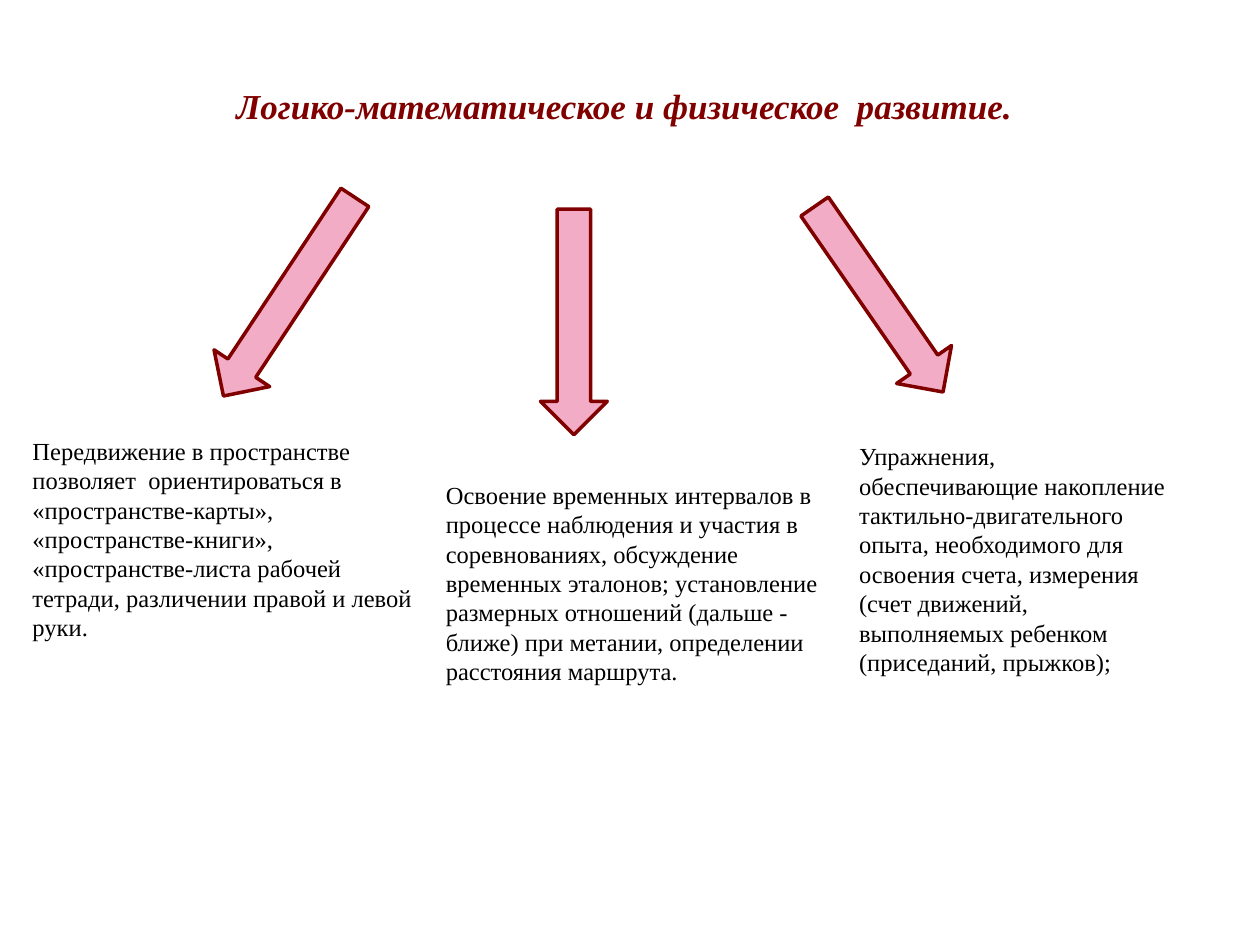
"""Build a slide with a title and three arrows leading to three notes."""
from dataclasses import dataclass

from pptx import Presentation
from pptx.dml.color import RGBColor
from pptx.enum.shapes import MSO_SHAPE
from pptx.enum.text import MSO_ANCHOR, MSO_AUTO_SIZE, PP_ALIGN
from pptx.slide import Slide
from pptx.util import Inches, Pt

DOWN = MSO_SHAPE.DOWN_ARROW
TOP, MIDDLE = MSO_ANCHOR.TOP, MSO_ANCHOR.MIDDLE
LEFT, CENTER = PP_ALIGN.LEFT, PP_ALIGN.CENTER
GROW = MSO_AUTO_SIZE.SHAPE_TO_FIT_TEXT
MAROON = RGBColor(0x80, 0x00, 0x00)
PINK = RGBColor(0xF2, 0xAC, 0xC5)
BLACK = RGBColor(0x00, 0x00, 0x00)
FACE = "Times New Roman"
WIDTH = 0.53

HEAD = {"name": FACE, "size": Pt(20), "bold": True, "italic": True}
BODY = {"name": FACE, "size": Pt(14)}


@dataclass
class Arrow:
    left: float
    top: float
    height: float
    turn: float = 0


@dataclass
class Note:
    left: float
    top: float
    width: float
    height: float
    text: str


TITLE = Note(0.62, 0.62, 8.67, 0.44,
             "Логико-математическое и физическое  развитие.")
ARROWS = [
    Arrow(2.03, 1.41, 1.89, 33.5),
    Arrow(4.29, 1.66, 1.79),
    Arrow(6.71, 1.48, 1.79, 325.3),
]
NOTES = [
    Note(3.44, 3.75, 3.2, 1.75,
         "Освоение временных интервалов в процессе наблюдения и участия в "
         "соревнованиях, обсуждение временных эталонов; установление "
         "размерных отношений (дальше - ближе) при метании, определении "
         "расстояния маршрута."),
    Note(0.16, 3.4, 3.36, 1.75,
         "Передвижение в пространстве позволяет  ориентироваться в "
         "«пространстве-карты», «пространстве-книги», «пространстве-листа "
         "рабочей тетради, различении правой и левой руки."),
    Note(6.72, 3.44, 2.73, 1.99,
         "Упражнения, обеспечивающие накопление тактильно-двигательного "
         "опыта, необходимого для освоения счета, измерения (счет движений, "
         "выполняемых ребенком (приседаний, прыжков);"),
]


def draw_arrow(slide: Slide, arrow: Arrow) -> None:
    shape = slide.shapes.add_shape(
        DOWN, Inches(arrow.left), Inches(arrow.top),
        Inches(WIDTH), Inches(arrow.height))
    shape.rotation = arrow.turn
    shape.shadow.inherit = False
    shape.fill.solid()
    shape.fill.fore_color.rgb = PINK
    shape.line.color.rgb = MAROON
    shape.line.width = Pt(2)


def draw_note(slide: Slide, note: Note, style: dict, color: RGBColor,
              align: PP_ALIGN = LEFT, anchor: MSO_ANCHOR = MIDDLE) -> None:
    box = slide.shapes.add_textbox(
        Inches(note.left), Inches(note.top),
        Inches(note.width), Inches(note.height))
    frame = box.text_frame
    frame.word_wrap = True
    frame.auto_size = GROW
    frame.vertical_anchor = anchor
    para = frame.paragraphs[0]
    para.alignment = align
    run = para.add_run()
    run.text = note.text
    for key, value in style.items():
        setattr(run.font, key, value)
    run.font.color.rgb = color


def main() -> None:
    deck = Presentation()
    deck.slide_width, deck.slide_height = Inches(10), Inches(7.5)
    slide = deck.slides.add_slide(deck.slide_layouts[6])
    draw_note(slide, TITLE, HEAD, MAROON, CENTER, TOP)
    for arrow in ARROWS:
        draw_arrow(slide, arrow)
    for note in NOTES:
        draw_note(slide, note, BODY, BLACK)
    deck.save("out.pptx")


if __name__ == "__main__":
    main()
